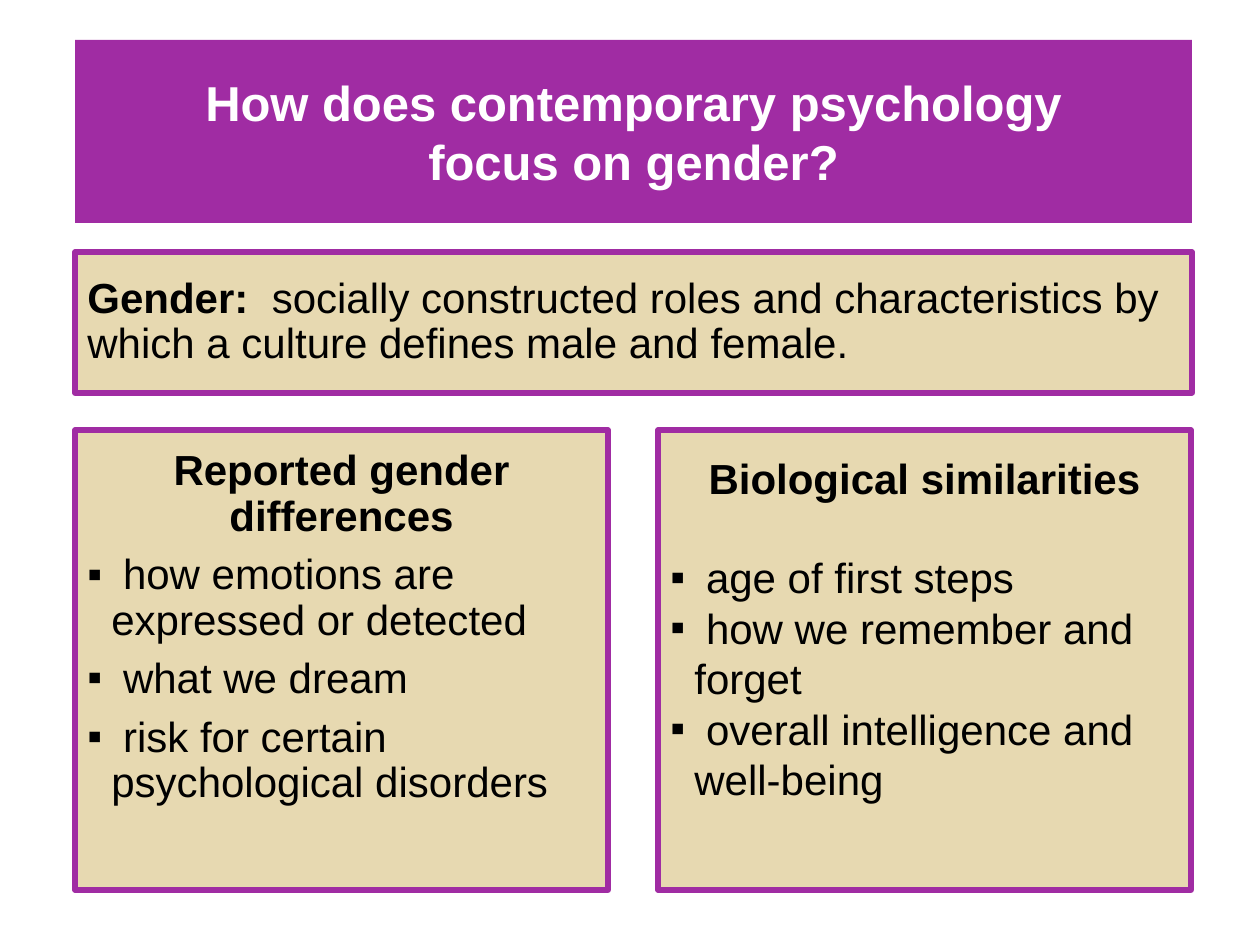
from dataclasses import dataclass

from lxml.etree import SubElement
from pptx import Presentation
from pptx.dml.color import RGBColor
from pptx.enum.shapes import MSO_SHAPE
from pptx.enum.text import MSO_ANCHOR, MSO_AUTO_SIZE, PP_ALIGN
from pptx.oxml.ns import qn
from pptx.util import Pt

EMU_PER_PX = 914400 / 126


@dataclass(frozen=True)
class Theme:
    font: str = "Arial"
    purple: RGBColor = RGBColor(0xA0, 0x2C, 0xA3)
    sand: RGBColor = RGBColor(0xE7, 0xD9, 0xB1)
    white: RGBColor = RGBColor(0xFF, 0xFF, 0xFF)
    black: RGBColor = RGBColor(0, 0, 0)
    title_size: int = 28
    body_size: int = 24
    border: int = 3


THEME = Theme()


def px(length):
    return round(length * EMU_PER_PX)


def style(paragraph, size, color, bold=False, align=PP_ALIGN.LEFT):
    font = paragraph.font
    font.name, font.size, font.bold = THEME.font, Pt(size), bold
    font.color.rgb = color
    paragraph.alignment = align


def add_bullet(paragraph, hanging):
    properties = paragraph._p.get_or_add_pPr()
    properties.set("marL", str(px(hanging)))
    properties.set("indent", str(-px(hanging)))
    SubElement(properties, qn("a:buFont"), typeface=THEME.font)
    SubElement(properties, qn("a:buChar"), char="▪")


def add_title(slide, box, lines):
    title = slide.shapes.title
    title.left, title.top, title.width, title.height = map(px, box)
    title.fill.solid()
    title.fill.fore_color.rgb = THEME.purple
    frame = title.text_frame
    frame.auto_size = MSO_AUTO_SIZE.NONE
    frame.vertical_anchor = MSO_ANCHOR.MIDDLE
    frame.text = "\n".join(lines)
    for paragraph in frame.paragraphs:
        style(paragraph, THEME.title_size, THEME.white, True, PP_ALIGN.CENTER)


def add_panel(slide, box):
    """Add a bordered sand rectangle and return its text frame."""
    shape = slide.shapes.add_shape(MSO_SHAPE.RECTANGLE, *map(px, box))
    shape.shadow.inherit = False
    shape.fill.solid()
    shape.fill.fore_color.rgb = THEME.sand
    shape.line.color.rgb = THEME.purple
    shape.line.width = Pt(THEME.border)
    frame = shape.text_frame
    frame.word_wrap = True
    frame.vertical_anchor = MSO_ANCHOR.MIDDLE
    return frame


def add_definition(slide, box, term, meaning):
    paragraph = add_panel(slide, box).paragraphs[0]
    style(paragraph, THEME.body_size, THEME.black)
    paragraph.line_spacing = 0.9
    term_run = paragraph.add_run()
    term_run.text = term
    term_run.font.bold = True
    paragraph.add_run().text = meaning


def add_list(slide, box, heading, items, line_spacing, heading_gap, item_gap):
    frame = add_panel(slide, box)
    frame.margin_bottom = px(70)  # lifts the centred text
    paragraph = frame.paragraphs[0]
    paragraph.text = heading
    style(paragraph, THEME.body_size, THEME.black, True, PP_ALIGN.CENTER)
    paragraph.line_spacing = line_spacing
    for index, item in enumerate(items):
        paragraph = frame.add_paragraph()
        paragraph.text = f" {item}"
        style(paragraph, THEME.body_size, THEME.black)
        paragraph.line_spacing = line_spacing
        paragraph.space_before = Pt(item_gap if index else heading_gap)
        add_bullet(paragraph, 24)


def main():
    presentation = Presentation()
    presentation.slide_width, presentation.slide_height = px(1260), px(945)
    slide = presentation.slides.add_slide(presentation.slide_layouts[5])

    left, width, gap = 75, 1117, 50
    column_width = (width - gap) // 2
    list_top, list_height = 430, 460

    add_title(slide, (left, 40, width, 183),
              ["How does contemporary psychology", "focus on gender?"])
    add_definition(
        slide, (left, 252, width, 141), "Gender:  ",
        "socially constructed roles and characteristics by which a culture "
        "defines male and female.")
    columns = [
        ("Reported gender differences",
         ["how emotions are expressed or detected", "what we dream",
          "risk for certain psychological disorders"], 0.9, 7.5, 7.5),
        ("Biological similarities",
         ["age of first steps", "how we remember and forget",
          "overall intelligence and well-being"], 1.0, 28, 0),
    ]
    for index, column in enumerate(columns):
        column_left = left + index * (column_width + gap)
        add_list(slide, (column_left, list_top, column_width, list_height),
                 *column)

    presentation.save("out.pptx")


if __name__ == "__main__":
    main()
